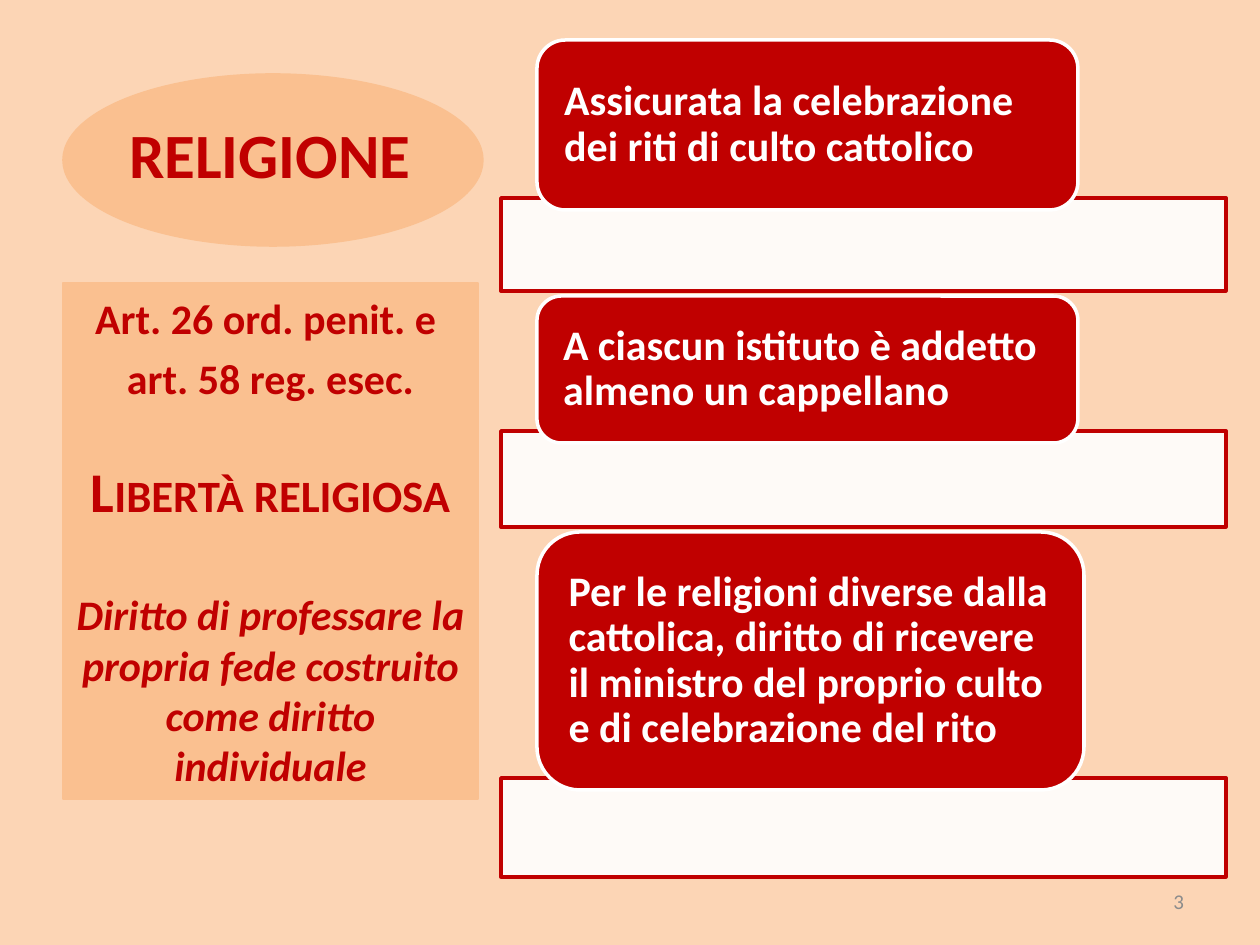
import pptx
import pptx.util
import pptx.dml.color
import pptx.enum.shapes
import pptx.enum.text
from lxml import etree

SCALE = 914400 // 126
SHAPES = pptx.enum.shapes.MSO_SHAPE
ALIGN = pptx.enum.text.PP_ALIGN
ANCHOR = pptx.enum.text.MSO_ANCHOR
COLOURS = {"peach": "FCD5B5", "orange": "FAC090", "red": "C00000", "white": "FFFFFF", "grey": "8C8C8C"}

TITLE = "RELIGIONE"
PAGE_NUMBER = "3"
ARTICLE_LINES = [
    ("Art. 26 ord. penit. e ", 0, {"size": 24}),
    ("art. 58 reg. esec.", 5, {"size": 24}),
    ("Libertà religiosa", 31, {"size": 32, "small_caps": True}),
    ("Diritto di professare la propria fede costruito come diritto individuale", 37,
     {"size": 24, "italic": True}),
]
CARDS = [
    {"text": "Assicurata la celebrazione dei riti di culto cattolico",
     "label": (537, 40, 541, 170), "bar": (501, 198, 725, 93)},
    {"text": "A ciascun istituto è addetto almeno un cappellano",
     "label": (537, 296, 541, 147), "bar": (501, 431, 725, 96)},
    {"text": "Per le religioni diverse dalla cattolica, diritto di ricevere il ministro "
             "del proprio culto e di celebrazione del rito",
     "label": (537, 532, 547, 258), "bar": (501, 778, 725, 99)},
]


def px(length):
    return pptx.util.Emu(length * SCALE)


def rgb(name):
    return pptx.dml.color.RGBColor.from_string(COLOURS[name])


def add_box(page, kind, place, fill, line, width=2):
    box = page.shapes.add_shape(kind, *map(px, place))
    box.shadow.inherit = False
    box.fill.solid()
    box.fill.fore_color.rgb = rgb(fill)
    box.line.color.rgb = rgb(line)
    box.line.width = pptx.util.Pt(width)
    return box


def set_opacity(box, percent):
    colour = box.fill._xPr.find(".//" + pptx.oxml.ns.qn("a:srgbClr"))
    etree.SubElement(colour, pptx.oxml.ns.qn("a:alpha"), val=str(percent * 1000))


def set_frame(box, insets, anchor):
    frame = box.text_frame
    frame.word_wrap = True
    frame.vertical_anchor = anchor
    for side, inset in zip(("left", "top", "right", "bottom"), insets):
        setattr(frame, "margin_" + side, px(inset))
    return frame


def write(para, text, size, colour, small_caps=False, align=ALIGN.LEFT, bold=True, italic=False, **spacing):
    para.alignment = align
    for name, value in spacing.items():
        setattr(para, name, value)
    span = para.add_run()
    span.text = text
    look = {"name": "Calibri", "size": pptx.util.Pt(size), "bold": bold, "italic": italic}
    for name, value in look.items():
        setattr(span.font, name, value)
    span.font.color.rgb = rgb(colour)
    if small_caps:
        span.font._element.set("cap", "small")


def add_title(page):
    oval = add_box(page, SHAPES.OVAL, (64, 75, 418, 170), "orange", "orange")
    frame = set_frame(oval, (0, 0, 6, 14), ANCHOR.MIDDLE)
    write(frame.paragraphs[0], TITLE, 36, "red", align=ALIGN.CENTER)


def add_card(page, card):
    bar = add_box(page, SHAPES.RECTANGLE, card["bar"], "white", "red")
    set_opacity(bar, 90)
    label = add_box(page, SHAPES.ROUNDED_RECTANGLE, card["label"], "red", "white")
    frame = set_frame(label, (19, 0, 19, 0), ANCHOR.MIDDLE)
    write(frame.paragraphs[0], card["text"], 24, "white", line_spacing=0.9)


def add_articles(page):
    panel = add_box(page, SHAPES.RECTANGLE, (63, 283, 415, 516), "orange", "orange", 0.75)
    frame = set_frame(panel, (13, 10, 13, 6), ANCHOR.TOP)
    for index, (text, gap, look) in enumerate(ARTICLE_LINES):
        para = frame.add_paragraph() if index else frame.paragraphs[0]
        write(para, text, colour="red", align=ALIGN.CENTER, space_before=pptx.util.Pt(gap), **look)


def add_page_number(page):
    box = page.shapes.add_textbox(*map(px, (903, 876, 294, 50)))
    frame = set_frame(box, (13, 6, 13, 6), ANCHOR.MIDDLE)
    write(frame.paragraphs[0], PAGE_NUMBER, 12, "grey", align=ALIGN.RIGHT, bold=False)


def main():
    deck = pptx.Presentation()
    deck.slide_width, deck.slide_height = px(1260), px(945)
    page = deck.slides.add_slide(deck.slide_layouts[6])
    page.background.fill.solid()
    page.background.fill.fore_color.rgb = rgb("peach")
    add_title(page)
    for card in CARDS:
        add_card(page, card)
    add_articles(page)
    add_page_number(page)
    deck.save("out.pptx")


if __name__ == "__main__":
    main()
